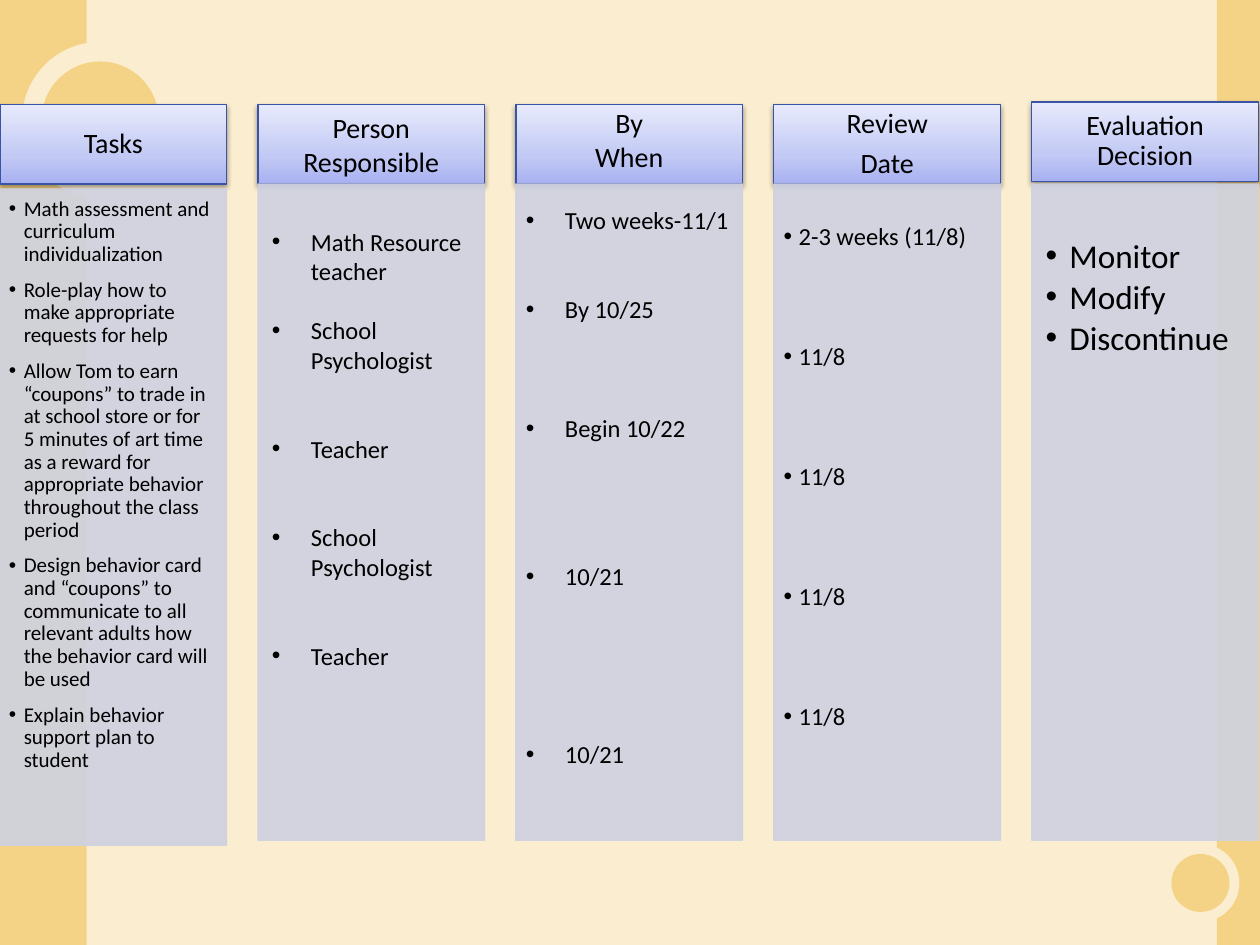
from dataclasses import dataclass

from pptx import Presentation
from pptx.dml.color import RGBColor
from pptx.enum.shapes import MSO_SHAPE
from pptx.enum.text import MSO_ANCHOR, PP_ALIGN
from pptx.oxml import parse_xml
from pptx.oxml.ns import qn
from pptx.util import Cm, Pt
from lxml.etree import SubElement

DRAWING_NS = "http://schemas.openxmlformats.org/drawingml/2006/main"


@dataclass(frozen=True)
class Theme:
    """Colours, font and type sizes of the slide."""

    cream: str = "FBEDCF"
    gold: str = "F4D387"
    panel: str = "CED1E1"
    border: str = "3A54A5"
    ink: str = "000000"
    header_stops: tuple = ((0, "A7B1F1"), (35, "C2C9F4"), (100, "E7EAFC"))
    font: str = "Calibri"
    header_size: int = 16
    task_size: int = 12
    entry_size: int = 14
    decision_size: int = 19


THEME = Theme()
COLUMN_PITCH, COLUMN_WIDTH = 5.2, 4.57
HEADER_TOP, HEADER_HEIGHT = 2.11, 1.6
PANEL_TOP, PANEL_HEIGHT = 3.71, 13.23
BLANK_LINE = 17


def colour(code):
    """Turn a hex code into a colour."""
    return RGBColor.from_string(code)


def add_block(slide, left, top, width, height, fill=None, kind=MSO_SHAPE.RECTANGLE):
    """Add a flat preset shape without a shadow or outline."""
    block = slide.shapes.add_shape(kind, Cm(left), Cm(top), Cm(width), Cm(height))
    block.shadow.inherit = False
    block.line.fill.background()
    if fill:
        block.fill.solid()
        block.fill.fore_color.rgb = colour(fill)
    return block


def add_circle(slide, centre_x, centre_y, diameter, fill):
    """Add a circle around a centre."""
    radius = diameter / 2
    add_block(slide, centre_x - radius, centre_y - radius, diameter, diameter,
              fill, MSO_SHAPE.OVAL)


def write_text(shape, entries, *, size, insets, align=PP_ALIGN.LEFT,
               anchor=MSO_ANCHOR.TOP, spacing=1.0, hang=0):
    """Write (text, space before) entries, bulleted when there is a hanging indent."""
    frame = shape.text_frame
    frame.word_wrap = True
    frame.vertical_anchor = anchor
    (frame.margin_left, frame.margin_top,
     frame.margin_right, frame.margin_bottom) = map(Cm, insets)
    for index, (text, gap) in enumerate(entries):
        paragraph = frame.paragraphs[0] if index == 0 else frame.add_paragraph()
        paragraph.alignment = align
        paragraph.line_spacing = spacing
        paragraph.space_before = Pt(gap)
        run = paragraph.add_run()
        run.text = text
        run.font.name = THEME.font
        run.font.size = Pt(size)
        run.font.color.rgb = colour(THEME.ink)
        if hang:
            properties = paragraph._p.get_or_add_pPr()
            properties.set("marL", str(Cm(hang)))
            properties.set("indent", str(-Cm(hang)))
            SubElement(properties, qn("a:buFont"), typeface="Arial")
            SubElement(properties, qn("a:buChar"), char="•")


def shade_header(header):
    """Give a header its gradient, border and soft shadow."""
    header.fill.gradient()
    header.fill.gradient_angle = 90
    stops = "".join(
        f'<a:gs pos="{position * 1000}"><a:srgbClr val="{code}"/></a:gs>'
        for position, code in THEME.header_stops)
    properties = header._element.spPr
    old_stops = properties.find(".//" + qn("a:gsLst"))
    old_stops.getparent().replace(
        old_stops, parse_xml(f'<a:gsLst xmlns:a="{DRAWING_NS}">{stops}</a:gsLst>'))
    header.line.color.rgb = colour(THEME.border)
    header.line.width = Pt(0.75)
    shadow = SubElement(properties.find(qn("a:effectLst")), qn("a:outerShdw"),
                        blurRad=str(Pt(3.1)), dist=str(Pt(1.6)), dir="5400000",
                        rotWithShape="0")
    shadow_colour = SubElement(shadow, qn("a:srgbClr"), val=THEME.ink)
    SubElement(shadow_colour, qn("a:alpha"), val="38000")


def add_header(slide, column, entries, top=HEADER_TOP, spacing=0.9, lift=0):
    """Add a column header, its label raised by the lift."""
    header = add_block(slide, column * COLUMN_PITCH, top, COLUMN_WIDTH, HEADER_HEIGHT)
    shade_header(header)
    write_text(header, entries, size=THEME.header_size, align=PP_ALIGN.CENTER,
               anchor=MSO_ANCHOR.MIDDLE, spacing=spacing,
               insets=(0.3, 0.1 - lift, 0.3, 0.1 + lift))


def add_panel(slide, column, entries, top=PANEL_TOP, **text_format):
    """Add the translucent panel that lists a column's entries."""
    panel = add_block(slide, column * COLUMN_PITCH, top, COLUMN_WIDTH,
                      PANEL_HEIGHT, THEME.panel)
    panel.line.color.rgb = colour(THEME.panel)
    panel.line.width = Pt(0.75)
    for code in panel._element.spPr.iter(qn("a:srgbClr")):
        SubElement(code, qn("a:alpha"), val="90000")
    write_text(panel, entries, **text_format)


def add_backdrop(slide):
    """Draw the cream ground, gold side bands and corner rings."""
    slide.background.fill.solid()
    slide.background.fill.fore_color.rgb = colour(THEME.cream)
    add_block(slide, 24.53, 0, 0.87, 19.05, THEME.gold)
    add_block(slide, 0, 0, 1.75, 19.05, THEME.gold)
    for x, y, outer, inner in ((2.02, 2.42, 3.15, 2.36), (24.2, 17.8, 1.57, 1.17)):
        add_circle(slide, x, y, outer, THEME.cream)
        add_circle(slide, x, y, inner, THEME.gold)


def spaced(texts, gap):
    """Pair texts with an equal gap before each one but the first."""
    return [(text, gap if index else 0) for index, text in enumerate(texts)]


def after_lines(*entries):
    """Turn (text, blank lines before) entries into (text, space before)."""
    return [(text, lines * BLANK_LINE) for text, lines in entries]


def main():
    """Build the action plan slide."""
    presentation = Presentation()
    presentation.slide_width, presentation.slide_height = Cm(25.4), Cm(19.05)
    slide = presentation.slides.add_slide(presentation.slide_layouts[6])
    add_backdrop(slide)

    tasks = (
        "Math assessment and curriculum individualization",
        "Role-play how to make appropriate requests for help",
        "Allow Tom to earn “coupons” to trade in at school store or for 5 minutes "
        "of art time as a reward for appropriate behavior throughout the class period",
        "Design behavior card and “coupons” to communicate to all relevant adults "
        "how the behavior card will be used",
        "Explain behavior support plan to student",
    )
    people = after_lines(("Math Resource teacher", 0), ("School Psychologist", 1),
                         ("Teacher", 2), ("School Psychologist", 2), ("Teacher", 2))
    deadlines = after_lines(("Two weeks-11/1", 0), ("By 10/25", 2),
                            ("Begin 10/22", 3), ("10/21", 4), ("10/21", 5))
    reviews = ["2-3 weeks (11/8)"] + ["11/8"] * 4
    decisions = ("Monitor", "Modify", "Discontinue")

    add_header(slide, 0, [("Tasks", 0)])
    add_panel(slide, 0, spaced(tasks, 7.5), top=3.81, size=THEME.task_size,
              insets=(0.18, 0.18, 0.23, 0.25), spacing=0.9, hang=0.3)
    add_header(slide, 1, [("Person Responsible", 0)], spacing=1.0)
    add_panel(slide, 1, people, size=THEME.entry_size,
              insets=(0.28, 0.86, 0.36, 0.13), hang=0.79)
    add_header(slide, 2, spaced(("By", "When"), 0), spacing=1.0, lift=0.1)
    add_panel(slide, 2, deadlines, size=THEME.entry_size,
              insets=(0.2, 0.43, 0.23, 0.13), hang=0.79)
    add_header(slide, 3, spaced(("Review", "Date"), 5.6))
    add_panel(slide, 3, spaced(reviews, 53.5), size=THEME.entry_size,
              insets=(0.2, 0.81, 0.28, 0.3), spacing=0.9, hang=0.3)
    add_header(slide, 4, [("Evaluation Decision", 0)], top=2.06)
    add_panel(slide, 4, spaced(decisions, 2.85), size=THEME.decision_size,
              insets=(0.28, 1.12, 0.38, 0.43), spacing=0.9, hang=0.48)

    presentation.save("out.pptx")


if __name__ == "__main__":
    main()
